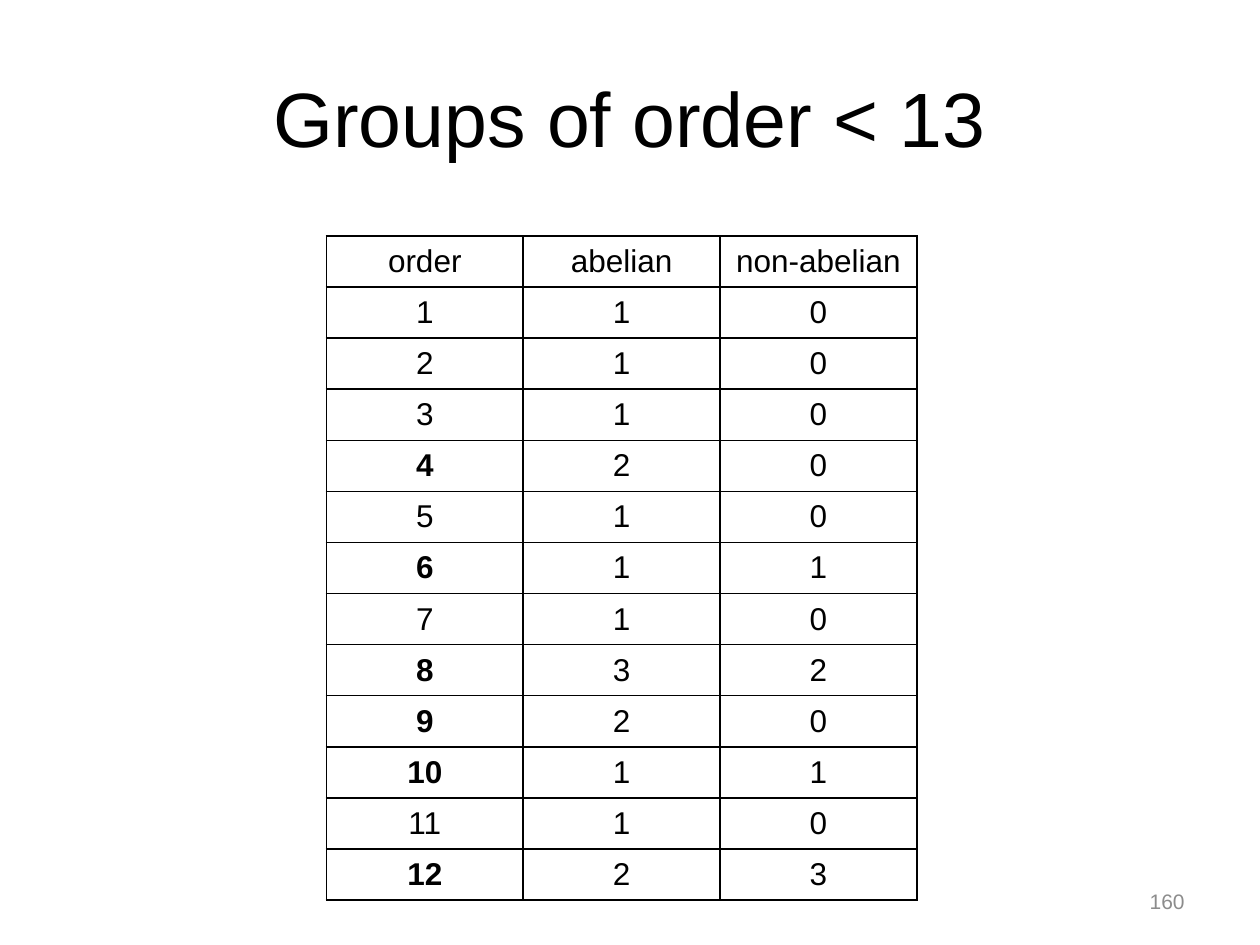
from lxml import etree
from pptx import Presentation
from pptx import util as u
from pptx.dml.color import RGBColor
from pptx.enum import text
from pptx.oxml.ns import qn

COLORS = {"ink": "000000", "paper": "FFFFFF", "muted": "8C8C8C"}

HEADINGS = ("order", "abelian", "non-abelian")
# Number of abelian and non-abelian groups of each order, from 1 up
GROUP_COUNTS = [(1, 0), (1, 0), (1, 0), (2, 0), (1, 0), (1, 1),
                (1, 0), (3, 2), (2, 0), (1, 1), (1, 0), (2, 3)]


def is_composite(number):
    return any(number % divisor == 0 for divisor in range(2, number))


class Page:
    """Holds the style and the current slide."""

    font = "Arial"

    def __init__(self, deck):
        self.slide = deck.slides.add_slide(deck.slide_layouts[5])

    def add_text(self, frame, words, size, align, color="ink", bold=False):
        para = frame.paragraphs[0]
        para.alignment = align
        span = para.add_run()
        span.text = words
        span.font.name = self.font
        span.font.size = u.Pt(size)
        span.font.bold = bold
        span.font.color.rgb = RGBColor.from_string(COLORS[color])

    def title(self, words, left, top, width, height):
        box = self.slide.shapes.title
        box.left, box.top = u.Pt(left), u.Pt(top)
        box.width, box.height = u.Pt(width), u.Pt(height)
        box.text_frame.vertical_anchor = text.MSO_ANCHOR.MIDDLE
        self.add_text(box.text_frame, words, 44, text.PP_ALIGN.CENTER)

    def page_number(self, number, left, top, width, height):
        box = self.slide.shapes.add_textbox(
            u.Pt(left), u.Pt(top), u.Pt(width), u.Pt(height))
        box.text_frame.word_wrap = True
        box.text_frame.vertical_anchor = text.MSO_ANCHOR.MIDDLE
        self.add_text(box.text_frame, str(number), 12, text.PP_ALIGN.RIGHT, "muted")

    def border(self, cell, width=1):
        """Draw all four edges; they must come before the cell fill."""
        properties = cell._tc.get_or_add_tcPr()
        for index, edge in enumerate(("lnL", "lnR", "lnT", "lnB")):
            line = etree.Element(qn(f"a:{edge}"), w=str(u.Pt(width)))
            fill = etree.SubElement(line, qn("a:solidFill"))
            etree.SubElement(fill, qn("a:srgbClr"), val=COLORS["ink"])
            properties.insert(index, line)

    def table(self, rows, bold_rows, left, top, width, height):
        grid = self.slide.shapes.add_table(
            len(rows), len(rows[0]),
            u.Pt(left), u.Pt(top), u.Pt(width), u.Pt(height)).table
        grid.first_row = grid.horz_banding = False
        for column in grid.columns:
            column.width = u.Pt(width / len(rows[0]))
        for r, values in enumerate(rows):
            grid.rows[r].height = u.Pt(height / len(rows))
            for c, value in enumerate(values):
                cell = grid.cell(r, c)
                cell.fill.solid()
                cell.fill.fore_color.rgb = RGBColor.from_string(COLORS["paper"])
                self.border(cell)
                cell.vertical_anchor = text.MSO_ANCHOR.MIDDLE
                self.add_text(cell.text_frame, str(value), 18, text.PP_ALIGN.CENTER,
                              bold=c == 0 and r in bold_rows)


def main():
    deck = Presentation()
    deck.slide_width, deck.slide_height = u.Pt(720), u.Pt(540)
    page = Page(deck)
    page.title("Groups of order < 13", 36, 21.6, 648, 90)
    rows = [HEADINGS] + [(order, *counts)
                         for order, counts in enumerate(GROUP_COUNTS, 1)]
    composite_orders = [order for order in range(1, len(rows)) if is_composite(order)]
    page.table(rows, composite_orders, 186.5, 134.8, 337.5, 379.6)
    page.page_number(160, 516, 500.5, 168, 28.75)
    deck.save("out.pptx")


if __name__ == "__main__":
    main()
